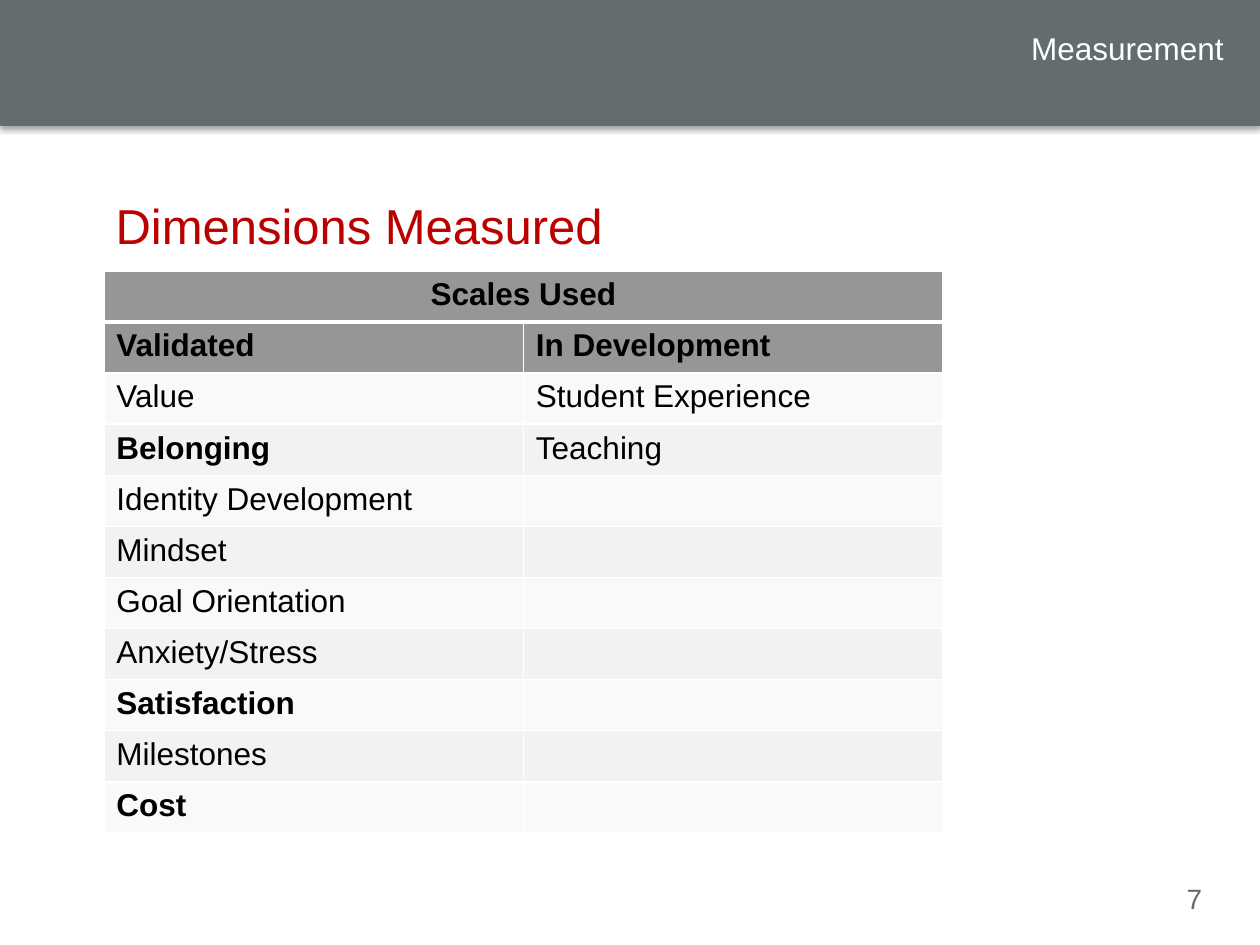
from dataclasses import dataclass
from typing import Optional

from lxml.etree import SubElement
from pptx import Presentation
from pptx.dml.color import RGBColor as RGB
from pptx.enum.shapes import MSO_SHAPE as Shape
from pptx.enum.text import PP_ALIGN as Align
from pptx.oxml.ns import qn
from pptx.util import Pt


@dataclass(frozen=True)
class Theme:
    font: str = "Arial"
    slate: str = "636D6E"
    red: str = "BB0000"
    white: str = "FFFFFF"
    black: str = "000000"
    header: str = "969696"
    bands: tuple = ("F9F9F9", "F2F2F2")
    title_size: float = 28
    body_size: float = 18
    number_size: float = 16


@dataclass(frozen=True)
class Label:
    text: str
    left: float
    top: float
    width: float
    height: float
    size: float
    color: str
    align: Align = Align.LEFT
    outline: Optional[str] = None
    inset_top: float = 3.6
    line_spacing: Optional[float] = None


@dataclass(frozen=True)
class Row:
    validated: str
    developing: str = ""
    bold: bool = False


THEME = Theme()

LABELS = [
    Label("7", 671, 500.4, 34.6, 26.6, THEME.number_size, THEME.slate),
    Label("Dimensions Measured", 59, 105.1, 622.8, 395.3, THEME.title_size,
          THEME.red, outline=THEME.white, inset_top=6.5),
    Label("Measurement", 439.2, 18, 267.1, 52.6, THEME.body_size, THEME.white,
          Align.RIGHT, THEME.slate, line_spacing=16.4),
]

ROWS = [
    Row("Value", "Student Experience"),
    Row("Belonging", "Teaching", bold=True),
    Row("Identity Development"),
    Row("Mindset"),
    Row("Goal Orientation"),
    Row("Anxiety/Stress"),
    Row("Satisfaction", bold=True),
    Row("Milestones"),
    Row("Cost", bold=True),
]


def style_text(p, size: float, color: str, bold: bool = False) -> None:
    for r in p.runs:
        r.font.name = THEME.font
        r.font.size = Pt(size)
        r.font.bold = bold
        r.font.color.rgb = RGB.from_string(color)


def add_band(s) -> None:
    sp = s.shapes.add_shape(Shape.RECTANGLE, 0, 0, Pt(720), Pt(72))
    sp.fill.solid()
    sp.fill.fore_color.rgb = RGB.from_string(THEME.slate)
    sp.line.fill.background()
    sp.shadow.inherit = False
    effects = sp.element.spPr.find(qn("a:effectLst"))
    shadow = SubElement(effects, qn("a:outerShdw"), blurRad=str(Pt(3.1)),
                        dist=str(Pt(1.8)), dir="5400000", rotWithShape="0")
    color = SubElement(shadow, qn("a:srgbClr"), val=THEME.black)
    SubElement(color, qn("a:alpha"), val="35000")


def add_label(s, label: Label) -> None:
    sp = s.shapes.add_textbox(Pt(label.left), Pt(label.top),
                              Pt(label.width), Pt(label.height))
    if label.outline:
        sp.line.color.rgb = RGB.from_string(label.outline)
        sp.line.width = Pt(0.75)
    tf = sp.text_frame
    tf.word_wrap = True
    tf.margin_top = Pt(label.inset_top)
    tf.text = label.text
    p = tf.paragraphs[0]
    p.alignment = label.align
    if label.line_spacing:
        p.line_spacing = Pt(label.line_spacing)
    style_text(p, label.size, label.color)


def set_borders(cell, bottom: float, top: float) -> None:
    tc_pr = cell._tc.get_or_add_tcPr()
    widths = {"a:lnL": 1, "a:lnR": 1, "a:lnT": top, "a:lnB": bottom}
    for i, (tag, width) in enumerate(widths.items()):
        ln = tc_pr.makeelement(qn(tag), {"w": str(Pt(width))})
        fill = SubElement(ln, qn("a:solidFill"))
        SubElement(fill, qn("a:srgbClr"), val=THEME.white)
        tc_pr.insert(i, ln)


def fill_cell(cell, text: str, fill: str, bold: bool = False,
              bottom: float = 1, top: float = 1) -> None:
    cell.fill.solid()
    cell.fill.fore_color.rgb = RGB.from_string(fill)
    set_borders(cell, bottom, top)
    if text:
        cell.text_frame.text = text
        style_text(cell.text_frame.paragraphs[0], THEME.body_size,
                   THEME.black, bold)


def add_scales_table(s, rows: list[Row]) -> None:
    count = len(rows) + 2
    row_height = 29.2
    table = s.shapes.add_table(count, 2, Pt(59.3), Pt(154.8), Pt(479.6),
                               Pt(row_height * count)).table
    for row in table.rows:
        row.height = Pt(row_height)

    # Heading rows
    heading = table.cell(0, 0)
    heading.merge(table.cell(0, 1))
    fill_cell(heading, "Scales Used", THEME.header, bold=True, bottom=3)
    heading.text_frame.paragraphs[0].alignment = Align.CENTER
    for col, text in enumerate(("Validated", "In Development")):
        fill_cell(table.cell(1, col), text, THEME.header, bold=True, top=3)

    # Banded body rows
    for i, row in enumerate(rows):
        fill = THEME.bands[i % 2]
        fill_cell(table.cell(i + 2, 0), row.validated, fill, row.bold)
        fill_cell(table.cell(i + 2, 1), row.developing, fill)


def main() -> None:
    prs = Presentation()
    prs.slide_width, prs.slide_height = Pt(720), Pt(540)
    s = prs.slides.add_slide(prs.slide_layouts[6])
    add_band(s)
    for label in LABELS:
        add_label(s, label)
    add_scales_table(s, ROWS)
    prs.save("out.pptx")


if __name__ == "__main__":
    main()
